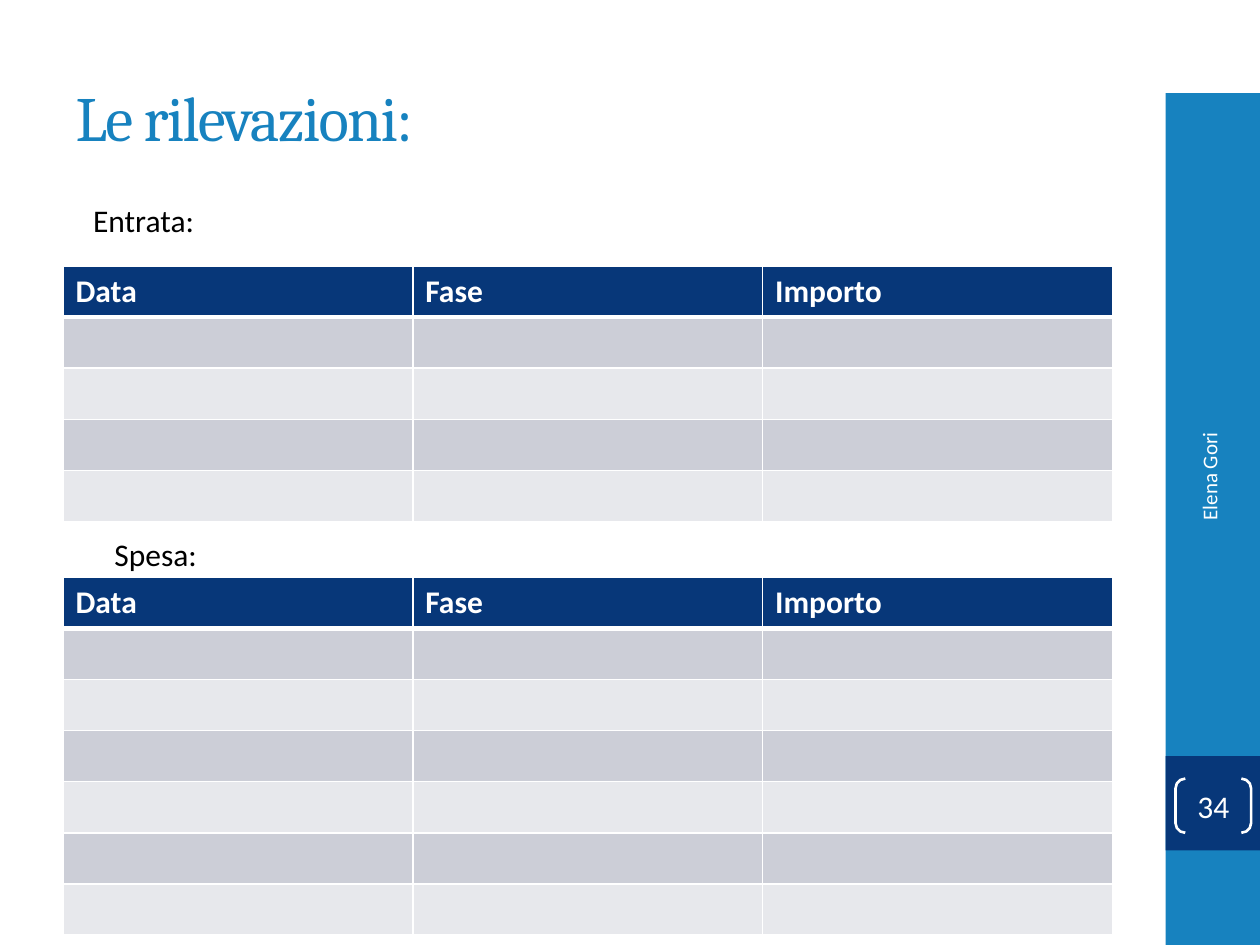
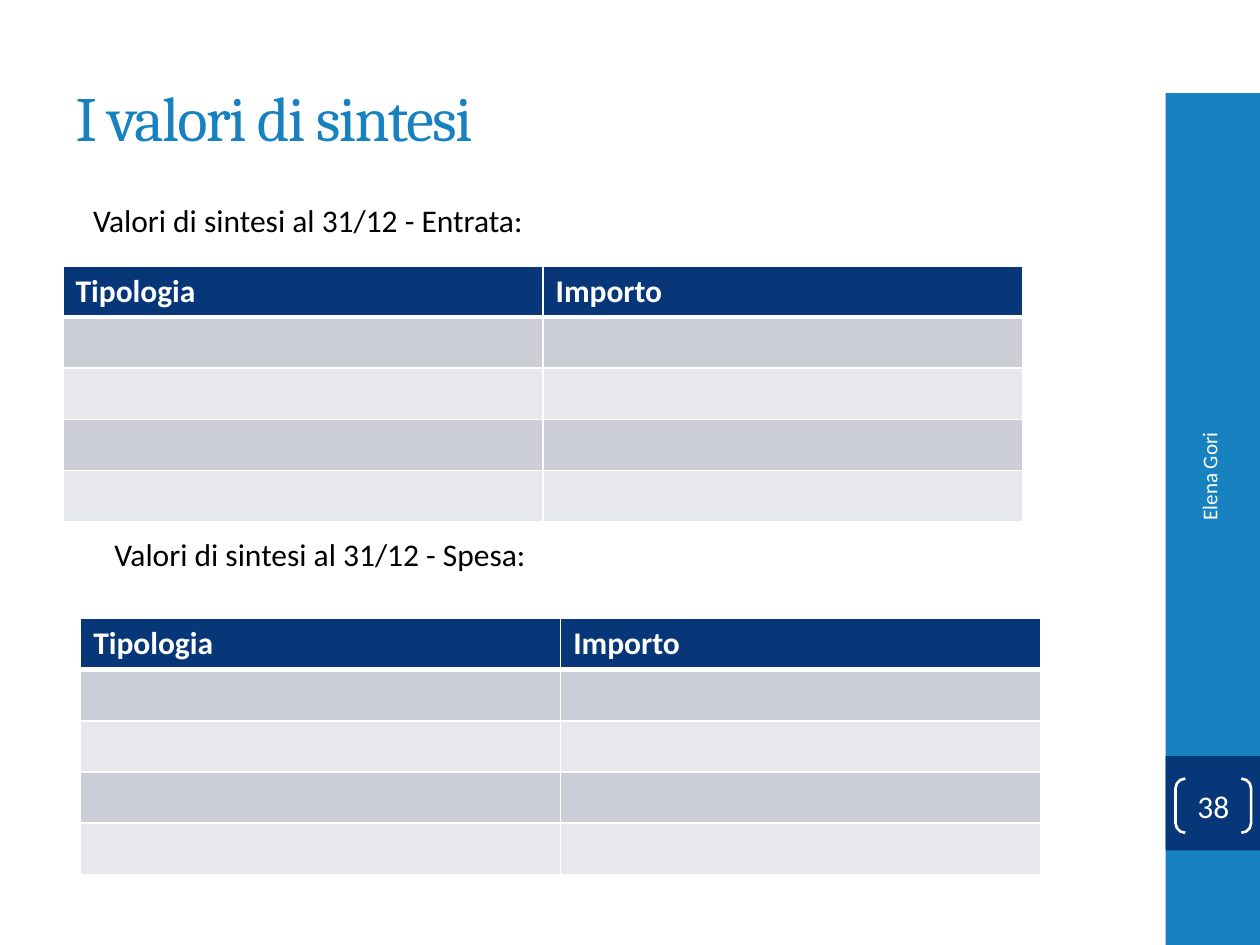
from dataclasses import dataclass

import pptx
import pptx.dml.color
import pptx.enum.shapes
import pptx.enum.text
import pptx.oxml
import pptx.oxml.ns
import pptx.util

RGBColor = pptx.dml.color.RGBColor
MSO_SHAPE = pptx.enum.shapes.MSO_SHAPE
MSO_ANCHOR = pptx.enum.text.MSO_ANCHOR
PP_ALIGN = pptx.enum.text.PP_ALIGN

BLUE = RGBColor(0x17, 0x82, 0xBF)
NAVY = RGBColor(0x07, 0x37, 0x79)
DARK_BAND = RGBColor(0xCC, 0xCE, 0xD7)
LIGHT_BAND = RGBColor(0xE7, 0xE8, 0xEC)
WHITE = RGBColor(0xFF, 0xFF, 0xFF)
BLACK = RGBColor(0x00, 0x00, 0x00)

HEADING_FONT = "Cambria"
BODY_FONT = "Calibri"

SLIDE_WIDTH = pptx.util.Inches(10)
SLIDE_HEIGHT = pptx.util.Inches(7.5)
COLUMN = SLIDE_WIDTH / 100
ROW = SLIDE_HEIGHT / 75
TABLE_ROW_HEIGHT = 4.06
AUTHOR = "Elena Gori"


@dataclass(frozen=True)
class Area:
    left: float
    top: float
    width: float
    height: float

    def lengths(self) -> tuple[int, int, int, int]:
        return (
            round(self.left * COLUMN),
            round(self.top * ROW),
            round(self.width * COLUMN),
            round(self.height * ROW),
        )


@dataclass(frozen=True)
class Caption:
    text: str
    area: Area


@dataclass(frozen=True)
class EmptyTable:
    headings: tuple[str, ...]
    left: float
    top: float
    width: float
    blank_rows: int


@dataclass(frozen=True)
class Page:
    title: str
    number: int
    captions: tuple[Caption, ...]
    tables: tuple[EmptyTable, ...]


TITLE_AREA = Area(5, 3, 83.3, 12.5)
SIDE_BAND = Area(92.5, 7.4, 7.5, 67.6)
NUMBER_BAND = Area(92.5, 60, 7.5, 7.5)
NUMBER_BRACKETS = Area(93.3, 61.8, 6, 4.3)
AUTHOR_AREA = Area(83, 44.3, 25.9, 4)

ENTRIES = ("Data", "Fase", "Importo")
SUMMARY = ("Tipologia", "Importo")

PAGES = (
    Page(
        "Le rilevazioni:",
        34,
        (
            Caption("Entrata:", Area(6.4, 15.5, 22.9, 4)),
            Caption("Spesa:", Area(8.1, 42, 22.9, 4)),
        ),
        (
            EmptyTable(ENTRIES, 5, 21.1, 83.3, 4),
            EmptyTable(ENTRIES, 5, 45.8, 83.3, 6),
        ),
    ),
    Page(
        "I valori di sintesi",
        38,
        (
            Caption("Valori di sintesi al 31/12 - Entrata:", Area(6.4, 15.5, 36.7, 4)),
            Caption("Valori di sintesi al 31/12 - Spesa:", Area(8.1, 42, 36.7, 4)),
        ),
        (
            EmptyTable(SUMMARY, 5, 21.1, 76.2, 4),
            EmptyTable(SUMMARY, 6.4, 49.1, 76.2, 4),
        ),
    ),
)


def write_text(text_frame, text: str, size: float, color: RGBColor,
               font_name: str = BODY_FONT, alignment=PP_ALIGN.LEFT,
               bold: bool = False):
    text_frame.text = text
    paragraph = text_frame.paragraphs[0]
    paragraph.alignment = alignment
    run = paragraph.runs[0]
    run.font.size = pptx.util.Pt(size)
    run.font.name = font_name
    run.font.color.rgb = color
    run.font.bold = bold
    return run


def add_title(slide, text: str) -> None:
    title = slide.shapes.title
    title.left, title.top, title.width, title.height = TITLE_AREA.lengths()
    title.text_frame.vertical_anchor = MSO_ANCHOR.MIDDLE
    title.text_frame.auto_size = pptx.enum.text.MSO_AUTO_SIZE.NONE
    run = write_text(title.text_frame, text, 36, BLUE, HEADING_FONT)
    run.font._element.set("spc", "-100")


def add_band(slide, area: Area, color: RGBColor) -> None:
    band = slide.shapes.add_shape(MSO_SHAPE.RECTANGLE, *area.lengths())
    band.shadow.inherit = False
    band.fill.solid()
    band.fill.fore_color.rgb = color
    band.line.fill.background()


def add_text_box(slide, area: Area, text: str, size: float, color: RGBColor,
                 alignment=PP_ALIGN.LEFT):
    text_box = slide.shapes.add_textbox(*area.lengths())
    text_box.text_frame.word_wrap = True
    write_text(text_box.text_frame, text, size, color, alignment=alignment)
    return text_box


def add_author(slide) -> None:
    author = add_text_box(slide, AUTHOR_AREA, AUTHOR, 12, WHITE, PP_ALIGN.RIGHT)
    author.rotation = 270
    author.text_frame.vertical_anchor = MSO_ANCHOR.MIDDLE


def add_page_number(slide, number: int) -> None:
    brackets = slide.shapes.add_shape(
        MSO_SHAPE.DOUBLE_BRACKET, *NUMBER_BRACKETS.lengths()
    )
    brackets.adjustments[0] = 0.18
    brackets.shadow.inherit = False
    brackets.fill.background()
    brackets.line.color.rgb = WHITE
    brackets.line.width = pptx.util.Pt(1.5)
    text_frame = brackets.text_frame
    text_frame.margin_left = text_frame.margin_right = 0
    text_frame.margin_top = text_frame.margin_bottom = 0
    text_frame.vertical_anchor = MSO_ANCHOR.MIDDLE
    write_text(text_frame, str(number), 18, WHITE, alignment=PP_ALIGN.CENTER)


def set_borders(cell, top: float, bottom: float) -> None:
    properties = cell._tc.get_or_add_tcPr()
    for side, points in (("L", 1), ("R", 1), ("T", top), ("B", bottom)):
        properties.append(pptx.oxml.parse_xml(
            f'<a:ln{side} {pptx.oxml.ns.nsdecls("a")} w="{pptx.util.Pt(points)}">'
            f'<a:solidFill><a:srgbClr val="{WHITE}"/></a:solidFill></a:ln{side}>'
        ))


def add_empty_table(slide, layout: EmptyTable) -> None:
    row_count = layout.blank_rows + 1
    area = Area(layout.left, layout.top, layout.width, row_count * TABLE_ROW_HEIGHT)
    table = slide.shapes.add_table(
        row_count, len(layout.headings), *area.lengths()
    ).table
    for row_index, row in enumerate(table.rows):
        is_header = row_index == 0
        band_color = DARK_BAND if row_index % 2 else LIGHT_BAND
        for heading, cell in zip(layout.headings, row.cells):
            set_borders(
                cell,
                top=3 if row_index == 1 else 1,
                bottom=3 if is_header else 1,
            )
            cell.fill.solid()
            cell.fill.fore_color.rgb = NAVY if is_header else band_color
            if is_header:
                write_text(cell.text_frame, heading, 18, WHITE, bold=True)


def add_page(presentation, page: Page) -> None:
    slide = presentation.slides.add_slide(presentation.slide_layouts[5])
    add_band(slide, SIDE_BAND, BLUE)
    add_band(slide, NUMBER_BAND, NAVY)
    add_title(slide, page.title)
    add_author(slide)
    add_page_number(slide, page.number)
    for table in page.tables:
        add_empty_table(slide, table)
    for caption in page.captions:
        add_text_box(slide, caption.area, caption.text, 18, BLACK)


def main() -> None:
    presentation = pptx.Presentation()
    presentation.slide_width = SLIDE_WIDTH
    presentation.slide_height = SLIDE_HEIGHT
    for page in PAGES:
        add_page(presentation, page)
    presentation.save("out.pptx")


if __name__ == "__main__":
    main()
